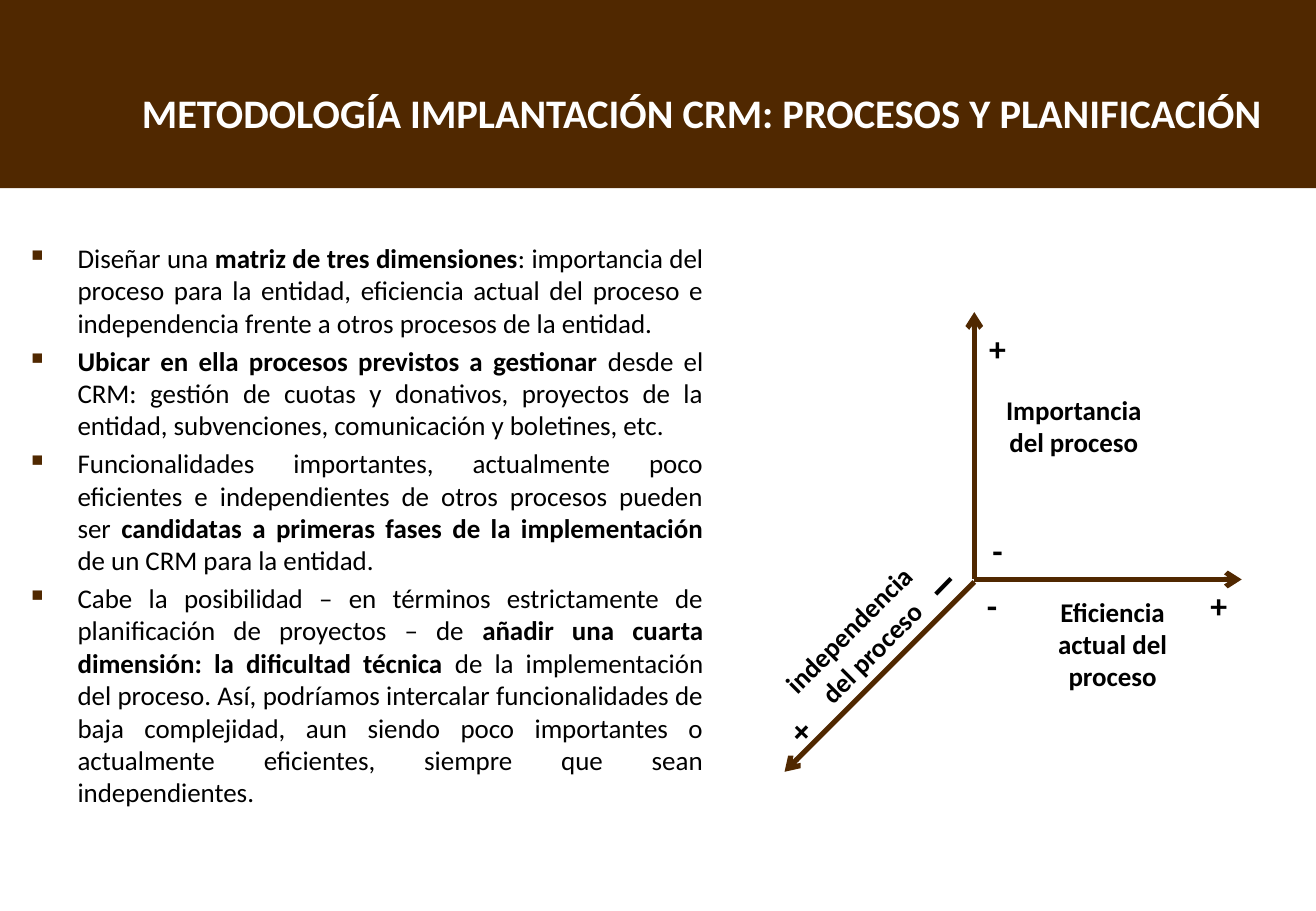
from pptx import Presentation
from pptx.dml.color import RGBColor
from pptx.enum.shapes import MSO_CONNECTOR, MSO_SHAPE
from pptx.enum.text import PP_ALIGN
from pptx.oxml.ns import qn
from pptx.util import Pt
from lxml import etree

LEFT, CENTER, JUSTIFY = PP_ALIGN.LEFT, PP_ALIGN.CENTER, PP_ALIGN.JUSTIFY
RECTANGLE = MSO_SHAPE.RECTANGLE
STRAIGHT = MSO_CONNECTOR.STRAIGHT

BULLETS = [
    [("Diseñar una ", False), ("matriz de tres dimensiones", True),
     (": importancia del proceso para la entidad, eficiencia actual del proceso e "
      "independencia frente a otros procesos de la entidad.", False)],
    [("Ubicar en ella procesos previstos a gestionar ", True),
     ("desde el CRM: gestión de cuotas y donativos, proyectos de la entidad, "
      "subvenciones, comunicación y boletines, etc.", False)],
    [("Funcionalidades importantes, actualmente poco eficientes e independientes "
      "de otros procesos pueden ser ", False),
     ("candidatas a primeras fases de la implementación ", True),
     ("de un CRM para la entidad.", False)],
    [("Cabe la posibilidad – en términos estrictamente de planificación de "
      "proyectos – de ", False),
     ("añadir una cuarta dimensión: la dificultad técnica ", True),
     ("de la implementación del proceso. Así, podríamos intercalar funcionalidades "
      "de baja complejidad, aun siendo poco importantes o actualmente eficientes, "
      "siempre que sean independientes.", False)],
]


def color(value):
    return RGBColor.from_string(value)


class SlideBuilder:
    font = "Calibri"
    brown = "502800"
    black = "000000"
    white = "FFFFFF"

    def __init__(self, slide):
        self.slide = slide

    def band(self, left, top, width, height):
        shape = self.slide.shapes.add_shape(
            RECTANGLE, Pt(left), Pt(top), Pt(width), Pt(height))
        shape.shadow.inherit = False
        shape.fill.solid()
        shape.fill.fore_color.rgb = color(self.brown)
        shape.line.fill.background()

    def box(self, left, top, width, height, rotation=0):
        shape = self.slide.shapes.add_textbox(Pt(left), Pt(top), Pt(width), Pt(height))
        shape.rotation = rotation
        shape.text_frame.word_wrap = True
        return shape.text_frame

    def style(self, font, size, text_color, bold):
        font.name = self.font
        font.size = Pt(size)
        font.color.rgb = color(text_color)
        font.bold = bold

    def label(self, text, left, top, width, height, size=16,
              text_color=black, align=CENTER, rotation=0):
        text_frame = self.box(left, top, width, height, rotation)
        text_frame.text = text
        paragraph = text_frame.paragraphs[0]
        paragraph.alignment = align
        self.style(paragraph.runs[0].font, size, text_color, True)

    def sign(self, text, center_x, center_y, rotation=0):
        width, height = 30, 32
        self.label(text, center_x - width / 2, center_y - height / 2,
                   width, height, size=20, rotation=rotation)

    def bullet(self, paragraph, indent):
        properties = paragraph._p.get_or_add_pPr()
        properties.set("marL", str(Pt(indent)))
        properties.set("indent", str(-Pt(indent)))
        bullet_color = etree.SubElement(properties, qn("a:buClr"))
        etree.SubElement(bullet_color, qn("a:srgbClr"), val=self.brown)
        etree.SubElement(properties, qn("a:buSzPct"), val="60000")
        etree.SubElement(properties, qn("a:buChar"), char="■")

    def bullet_list(self, items, left, top, width, height):
        text_frame = self.box(left, top, width, height)
        for index, segments in enumerate(items):
            paragraph = text_frame.add_paragraph() if index else text_frame.paragraphs[0]
            self.bullet(paragraph, 27.4)
            paragraph.alignment = JUSTIFY
            if index:
                paragraph.space_before = Pt(3.2)
            for text, bold in segments:
                run = paragraph.add_run()
                run.text = text
                self.style(run.font, 16, self.black, bold)

    def arrow(self, start, end):
        connector = self.slide.shapes.add_connector(
            STRAIGHT, *(Pt(length) for length in start + end))
        connector.line.color.rgb = color(self.brown)
        connector.line.width = Pt(3)
        etree.SubElement(connector.line._get_or_add_ln(), qn("a:tailEnd"), type="arrow")
        etree.SubElement(connector._element.spPr, qn("a:effectLst"))


def main():
    presentation = Presentation()
    presentation.slide_width = Pt(780)
    presentation.slide_height = Pt(540)
    builder = SlideBuilder(presentation.slides.add_slide(presentation.slide_layouts[6]))

    builder.band(0, 0, 780, 111.5)
    builder.label("METODOLOGÍA IMPLANTACIÓN CRM: PROCESOS Y PLANIFICACIÓN",
                  77, 48.5, 682, 36, size=24, text_color=builder.white, align=LEFT)
    builder.bullet_list(BULLETS, 11.5, 139.7, 412.5, 323)

    origin_x, origin_y, axis_length = 577.5, 343.5, 158.5
    builder.arrow((origin_x, origin_y), (origin_x, origin_y - axis_length))
    builder.arrow((origin_x, origin_y), (origin_x + axis_length, origin_y))
    builder.arrow((origin_x, origin_y + 1.5), (origin_x - 112.5, origin_y + 114))

    builder.label("Eficiencia actual del proceso", 605.5, 349.2, 108, 65.5)
    builder.label("independencia del proceso", 450.7, 357.1, 118, 46, rotation=315)
    builder.label("Importancia del proceso", 582.5, 229.7, 108, 46)

    for text, center_x, center_y, rotation in (
            ("-", 588, 359, 0), ("+", 722.5, 359, 0),
            ("+", 591.3, 206.5, 0), ("-", 591.3, 326.5, 0),
            ("I", 560, 347, 44.2), ("+", 476, 433.5, 44.2)):
        builder.sign(text, center_x, center_y, rotation)

    presentation.save("out.pptx")


if __name__ == "__main__":
    main()
